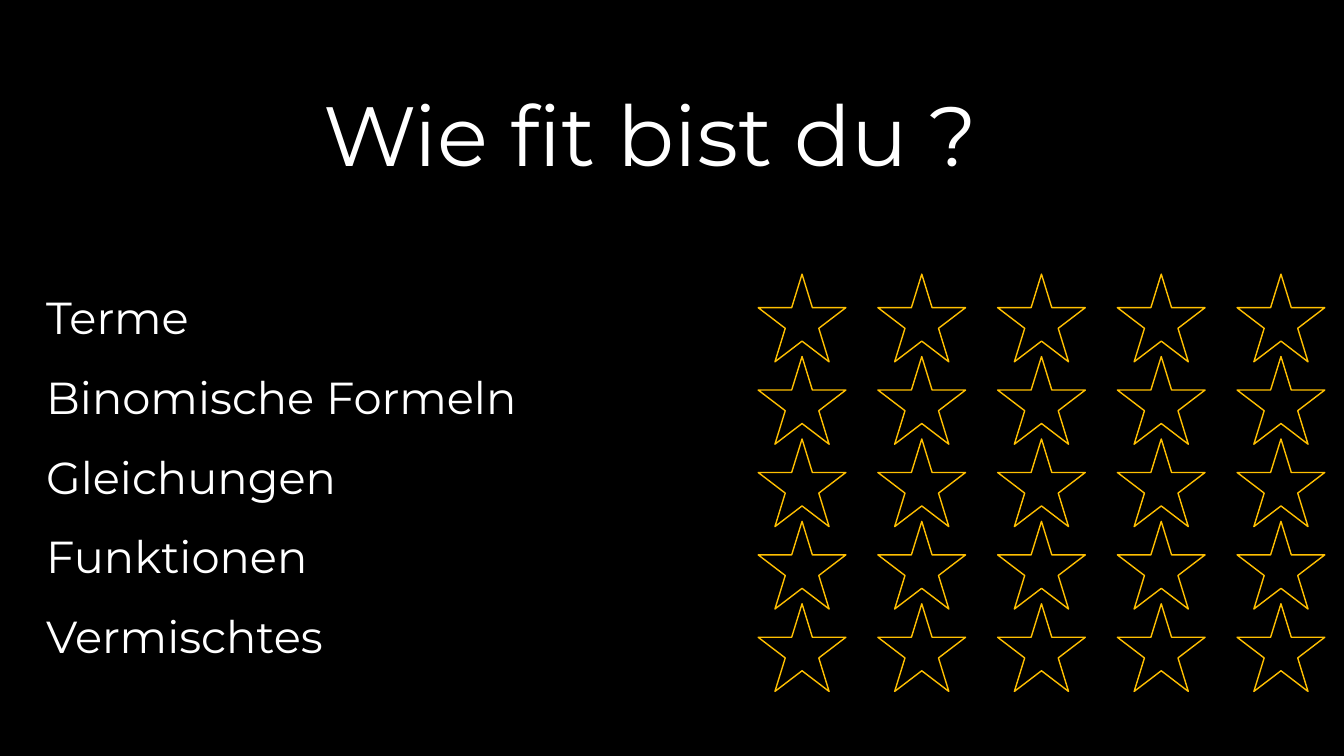
from dataclasses import dataclass

from pptx import Presentation
from pptx.dml.color import RGBColor as Rgb
from pptx.enum.shapes import MSO_SHAPE as Kind
from pptx.enum.text import MSO_ANCHOR as Anchor, PP_ALIGN as Align
from pptx.util import Inches, Pt


@dataclass(frozen=True)
class Theme:
    """Colours, font and type sizes of the slide."""
    black: Rgb = Rgb(0, 0, 0)
    white: Rgb = Rgb(255, 255, 255)
    gold: Rgb = Rgb(255, 192, 0)
    face: str = "Montserrat"
    head: int = 60
    body: int = 32


LOOK = Theme()
TITLE = "Wie fit bist du ?"
TOPICS = ["Terme", "Binomische Formeln", "Gleichungen", "Funktionen", "Vermischtes"]
STARS = 5


def apply(obj, values):
    """Set each named attribute on an object."""
    for name, value in values.items():
        setattr(obj, name, value)


def add_text(slide, box):
    """Place the centred title and the list of topics in one box."""
    frame = slide.shapes.add_textbox(*map(Inches, box)).text_frame
    apply(frame, {"word_wrap": True, "vertical_anchor": Anchor.MIDDLE})
    for row, text in enumerate([TITLE, *TOPICS]):
        para = frame.add_paragraph() if row else frame.paragraphs[0]
        size = LOOK.body if row else LOOK.head
        apply(para, {
            "alignment": Align.LEFT if row else Align.CENTER,
            "line_spacing": 1.48 if row else 0.9,
            "space_before": Pt(57 if row == 1 else 0),
        })
        run = para.add_run()
        run.text = text
        apply(run.font, {"name": LOOK.face, "size": Pt(size)})
        run.font.color.rgb = LOOK.white


def add_stars(slide, box, size):
    """Spread a row of rating stars per topic evenly over the box."""
    left, top, width, height = box
    across = (width - size) / (STARS - 1)
    down = (height - size) / (len(TOPICS) - 1)
    for row in range(len(TOPICS)):
        for col in range(STARS):
            place = (left + col * across, top + row * down, size, size)
            star = slide.shapes.add_shape(Kind.STAR_5_POINT, *map(Inches, place))
            star.shadow.inherit = False
            star.fill.solid()
            star.fill.fore_color.rgb = LOOK.black
            star.line.color.rgb = LOOK.gold
            star.line.width = Pt(1)


def main():
    """Build and save the slide."""
    deck = Presentation()
    apply(deck, {"slide_width": Inches(13.33), "slide_height": Inches(7.5)})
    slide = deck.slides.add_slide(deck.slide_layouts[6])
    slide.background.fill.solid()
    slide.background.fill.fore_color.rgb = LOOK.black
    add_text(slide, (0.36, 1.12, 12.18, 5.26))
    add_stars(slide, (7.52, 2.72, 5.62, 4.14), 0.87)
    deck.save("out.pptx")


if __name__ == "__main__":
    main()
